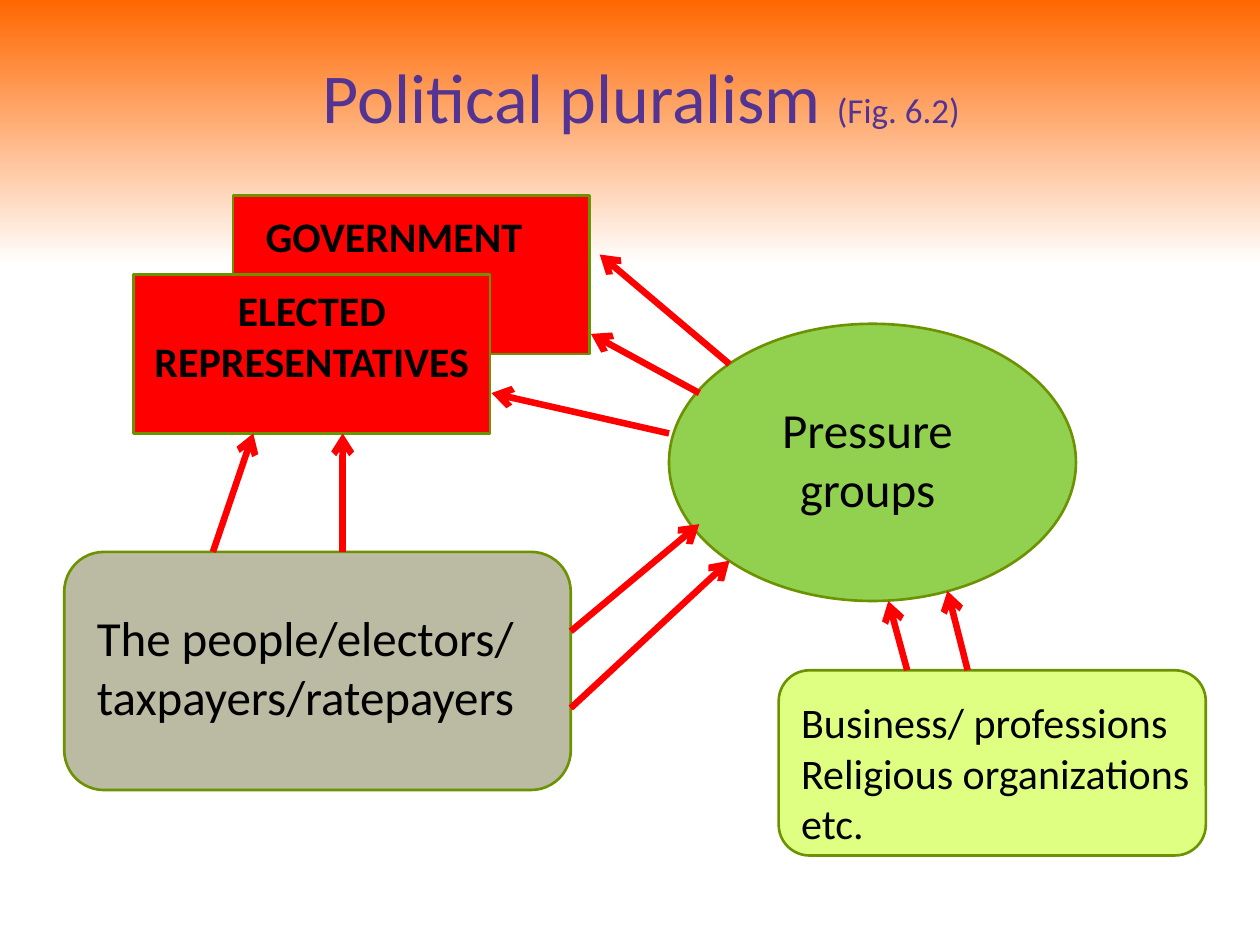
from lxml import etree
from pptx import Presentation
from pptx.dml.color import RGBColor
from pptx.enum import shapes, text
from pptx.oxml.ns import qn
from pptx.util import Inches, Pt

FONT = "Calibri"
COLORS = {
    "sky": "FF6700", "white": "FFFFFF", "title": "533492", "text": "000000",
    "outline": "6D9200", "arrow": "FF0000", "state": "FF0000",
    "people": "BBBAA2", "pressure": "92D050", "business": "DFFF82",
}
RECT = shapes.MSO_SHAPE.RECTANGLE
ROUNDED = shapes.MSO_SHAPE.ROUNDED_RECTANGLE
OVAL = shapes.MSO_SHAPE.OVAL
LEFT, CENTER = text.PP_ALIGN.LEFT, text.PP_ALIGN.CENTER

TITLE = ("Political pluralism ", "(Fig. 6.2)")
TITLE_BOX = (0.59, 0.29, 9, 0.93)

# preset, colour, (left, top, width, height)
ACTORS = [
    (RECT, "state", (1.85, 1.55, 2.83, 1.26)),
    (RECT, "state", (1.06, 2.18, 2.83, 1.26)),
    (ROUNDED, "people", (0.51, 4.38, 4.02, 1.89)),
    (OVAL, "pressure", (5.31, 2.57, 3.23, 2.2)),
    (ROUNDED, "business", (6.18, 5.32, 3.39, 1.47)),
]

# paragraphs, (left, top, width, height), size, bold, alignment
LABELS = [
    (["GOVERNMENT"], (2.01, 1.62, 2.52, 0.5), 24, True, LEFT),
    (["ELECTED REPRESENTATIVES"], (1.06, 2.21, 2.83, 0.91), 24, True, CENTER),
    (["The people/electors/ taxpayers/ratepayers"],
     (0.67, 4.77, 3.7, 1.04), 28, False, LEFT),
    (["Pressure groups"], (6.02, 3.12, 1.73, 1.04), 28, False, CENTER),
    (["Business/ professions", "Religious organizations etc."],
     (6.26, 5.48, 3.31, 1.31), 24, False, LEFT),
]

# start, end
INFLUENCES = [
    ((1.69, 4.38), (2.01, 3.44)),  # people to representatives
    ((2.72, 4.38), (2.72, 3.44)),
    ((4.53, 5.01), (5.55, 4.16)),  # people to pressure groups
    ((4.53, 5.62), (5.79, 4.45)),
    ((7.2, 5.32), (7.05, 4.77)),   # business to pressure groups
    ((7.68, 5.32), (7.52, 4.69)),
    ((5.79, 2.89), (4.76, 2.02)),  # pressure groups to government
    ((5.55, 3.12), (4.69, 2.65)),
    ((5.31, 3.44), (3.9, 3.12)),   # pressure groups to representatives
]


def rgb(name):
    return RGBColor.from_string(COLORS[name])


def inches(values):
    return [Inches(value) for value in values]


def paint_background(slide):
    fill = slide.background.fill
    fill.gradient()
    fill.gradient_angle = 270
    for stop, color, position in zip(fill.gradient_stops, ("sky", "white"), (0, 0.28)):
        stop.color.rgb = rgb(color)
        stop.position = position


def add_label(slide, paragraphs, box, size, bold, align, color="text"):
    frame = slide.shapes.add_textbox(*inches(box)).text_frame
    frame.word_wrap = True
    frame.text = "\n".join(paragraphs)
    for paragraph in frame.paragraphs:
        paragraph.alignment = align
        font = paragraph.font
        font.name, font.size, font.bold = FONT, Pt(size), bold
        font.color.rgb = rgb(color)
    return frame


def add_title(slide):
    name, figure = TITLE
    frame = add_label(slide, [name], TITLE_BOX, 40, False, CENTER, "title")
    frame.vertical_anchor = text.MSO_ANCHOR.MIDDLE
    reference = frame.paragraphs[0].add_run()
    reference.text = figure
    reference.font.size = Pt(20)


def add_actor(slide, preset, color, box):
    actor = slide.shapes.add_shape(preset, *inches(box))
    actor.shadow.inherit = False
    actor.fill.solid()
    actor.fill.fore_color.rgb = rgb(color)
    actor.line.color.rgb = rgb("outline")
    actor.line.width = Pt(1.5)


def add_arrow(slide, start, end):
    arrow = slide.shapes.add_connector(
        shapes.MSO_CONNECTOR.STRAIGHT, *inches(start + end))
    arrow.line.color.rgb = rgb("arrow")
    arrow.line.width = Pt(3.75)
    etree.SubElement(arrow.line._get_or_add_ln(), qn("a:tailEnd"), type="arrow")
    etree.SubElement(arrow._element.spPr, qn("a:effectLst"))


def main():
    deck = Presentation()
    deck.slide_width, deck.slide_height = Inches(10), Inches(7.5)
    slide = deck.slides.add_slide(deck.slide_layouts[6])
    paint_background(slide)
    add_title(slide)
    for actor in ACTORS:
        add_actor(slide, *actor)
    for label in LABELS:
        add_label(slide, *label)
    for influence in INFLUENCES:
        add_arrow(slide, *influence)
    deck.save("out.pptx")


if __name__ == "__main__":
    main()
